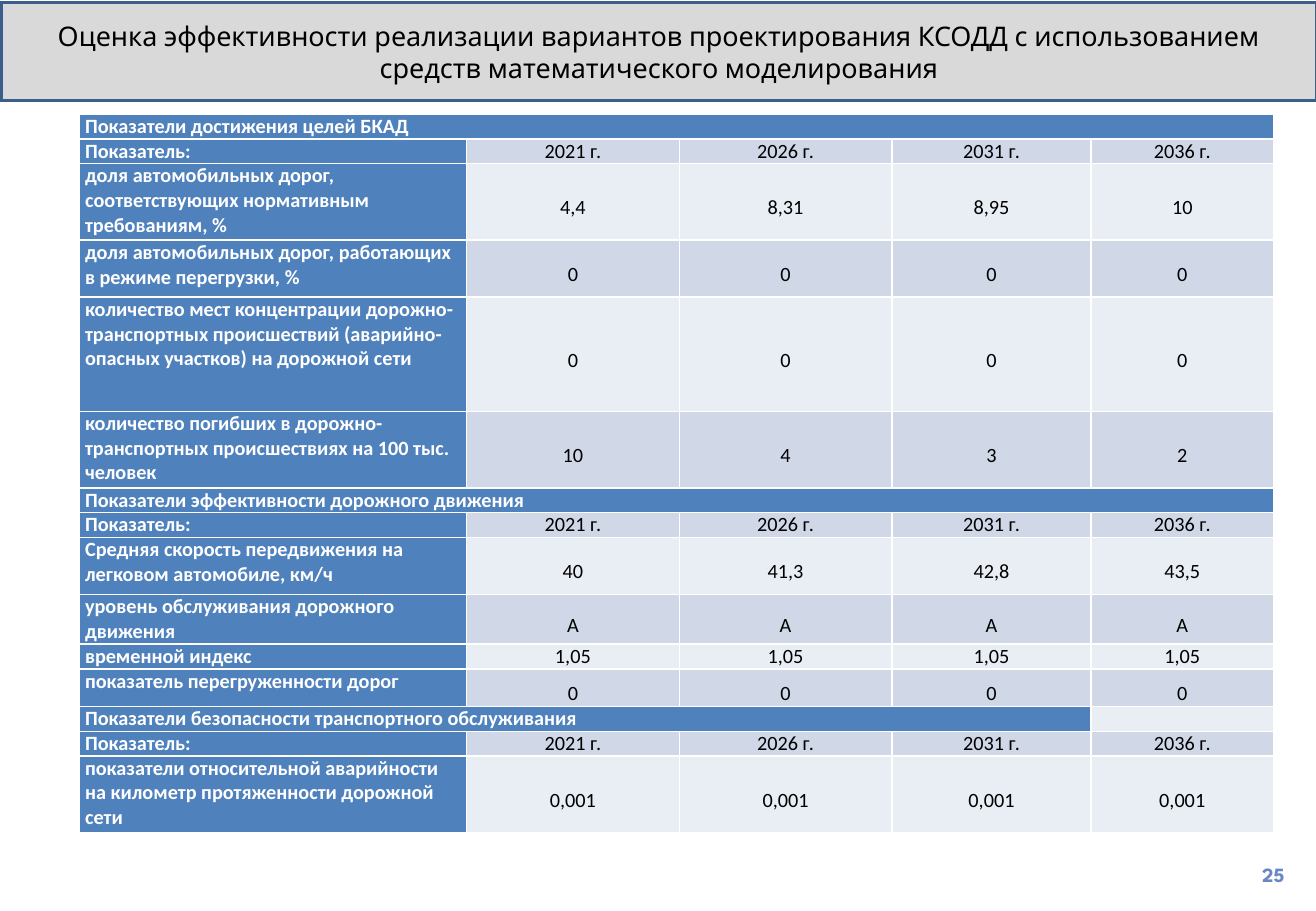
from dataclasses import dataclass

from lxml import etree
from pptx import Presentation
from pptx.dml.color import RGBColor
from pptx.enum import text as t
from pptx.oxml import ns
from pptx.util import Inches, Pt


@dataclass(frozen=True)
class Theme:
    title_font: str = "League Spartan"
    table_font: str = "Calibri"
    title_size: int = 16
    body_size: int = 12
    black: str = "000000"
    white: str = "FFFFFF"
    banner: str = "D9D9D9"
    banner_line: str = "3A5F8C"
    heading: str = "4F81BD"
    bands: tuple = ("E9EDF4", "D0D8E8")
    number: str = "6987C3"


THEME = Theme()
TITLE = ("Оценка эффективности реализации вариантов проектирования КСОДД "
         "с использованием средств математического моделирования")
YEARS = ("2021 г.", "2026 г.", "2031 г.", "2036 г.")
COLUMN_WIDTHS = (3.19, 1.75, 1.75, 1.64, 1.5)
LINE_ROW = 0.2
# Section heading, number of columns it spans, and rows of (label, values, height)
SECTIONS = (
    ("Показатели достижения целей БКАД", 5, (
        ("доля автомобильных дорог, соответствующих нормативным требованиям, %",
         ("4,4", "8,31", "8,95", "10"), 0.63),
        ("доля автомобильных дорог, работающих в режиме перегрузки, %", ("0",) * 4, 0.47),
        ("количество мест концентрации дорожно-транспортных происшествий "
         "(аварийно-опасных участков) на дорожной сети", ("0",) * 4, 0.94),
        ("количество погибших в дорожно-транспортных происшествиях на 100 тыс. человек",
         ("10", "4", "3", "2"), 0.63),
    )),
    ("Показатели эффективности дорожного движения", 5, (
        ("Средняя скорость передвижения на легковом автомобиле, км/ч",
         ("40", "41,3", "42,8", "43,5"), 0.47),
        ("уровень обслуживания дорожного движения", ("А",) * 4, 0.41),
        ("временной индекс", ("1,05",) * 4, LINE_ROW),
        ("показатель перегруженности дорог", ("0",) * 4, 0.31),
    )),
    ("Показатели безопасности транспортного обслуживания", 4, (
        ("показатели относительной аварийности на километр протяженности дорожной сети",
         ("0,001",) * 4, 0.63),
    )),
)


def place(shape, box):
    shape.left, shape.top, shape.width, shape.height = map(Inches, box)


def write(para, words, font, size, color, bold, align):
    para.text = words
    para.alignment = align
    for span in para.runs:
        span.font.name = font
        span.font.size = Pt(size)
        span.font.bold = bold
        span.font.color.rgb = RGBColor.from_string(color)


def add_banner(page, box):
    banner = page.shapes.title
    place(banner, box)
    banner.fill.solid()
    banner.fill.fore_color.rgb = RGBColor.from_string(THEME.banner)
    banner.line.color.rgb = RGBColor.from_string(THEME.banner_line)
    banner.line.width = Pt(2)
    frame = banner.text_frame
    frame.word_wrap = True
    frame.auto_size = t.MSO_AUTO_SIZE.NONE
    frame.vertical_anchor = t.MSO_ANCHOR.MIDDLE
    write(frame.paragraphs[0], TITLE, THEME.title_font, THEME.title_size,
          THEME.black, False, t.PP_ALIGN.CENTER)


def fill_cell(cell, words, fill, is_label, spacing=None):
    cell.fill.solid()
    cell.fill.fore_color.rgb = RGBColor.from_string(fill)
    cell.margin_left = cell.margin_right = Inches(0.05)
    cell.margin_top = cell.margin_bottom = 0
    cell.vertical_anchor = t.MSO_ANCHOR.TOP if is_label else t.MSO_ANCHOR.MIDDLE
    para = cell.text_frame.paragraphs[0]
    write(para, words, THEME.table_font, THEME.body_size,
          THEME.white if is_label else THEME.black, is_label,
          t.PP_ALIGN.LEFT if is_label else t.PP_ALIGN.CENTER)
    if spacing:
        para.line_spacing = spacing
    if not words:  # an empty cell would otherwise take the default 18 pt height
        etree.SubElement(para._p, ns.qn("a:endParaRPr"), sz=str(THEME.body_size * 100))


def table_rows():
    """Flatten the sections into (label, values, height, heading span)."""
    for heading, columns, indicators in SECTIONS:
        yield heading, ("",) * 4, LINE_ROW, columns
        yield "Показатель:", YEARS, LINE_ROW, 1
        for label, values, height in indicators:
            yield label, values, height, 1


def add_indicators(page, box):
    rows = list(table_rows())
    table = page.shapes.add_table(len(rows), len(COLUMN_WIDTHS), *map(Inches, box)).table
    for column, width in zip(table.columns, COLUMN_WIDTHS):
        column.width = Inches(width)
    for index, (label, values, height, columns) in enumerate(rows):
        table.rows[index].height = Inches(height)
        spacing = 1.5 if height > LINE_ROW else None
        fill_cell(table.cell(index, 0), label, THEME.heading, True)
        for offset, value in enumerate(values, 1):
            fill_cell(table.cell(index, offset), value, THEME.bands[index % 2], False, spacing)
        if columns > 1:
            table.cell(index, 0).merge(table.cell(index, columns - 1))


def add_page_number(page, box):
    frame = page.shapes.add_textbox(*map(Inches, box)).text_frame
    frame.word_wrap = True
    frame.vertical_anchor = t.MSO_ANCHOR.BOTTOM
    write(frame.paragraphs[0], "25", THEME.title_font, THEME.body_size,
          THEME.number, True, t.PP_ALIGN.RIGHT)


def main():
    deck = Presentation()
    deck.slide_width, deck.slide_height = Inches(10.83), Inches(7.5)
    page = deck.slides.add_slide(deck.slide_layouts[5])
    add_banner(page, (0.01, 0.02, 10.83, 0.81))
    add_indicators(page, (0.65, 0.94, sum(COLUMN_WIDTHS), 5.89))
    add_page_number(page, (8.14, 6.83, 2.53, 0.52))
    deck.save("out.pptx")


if __name__ == "__main__":
    main()
